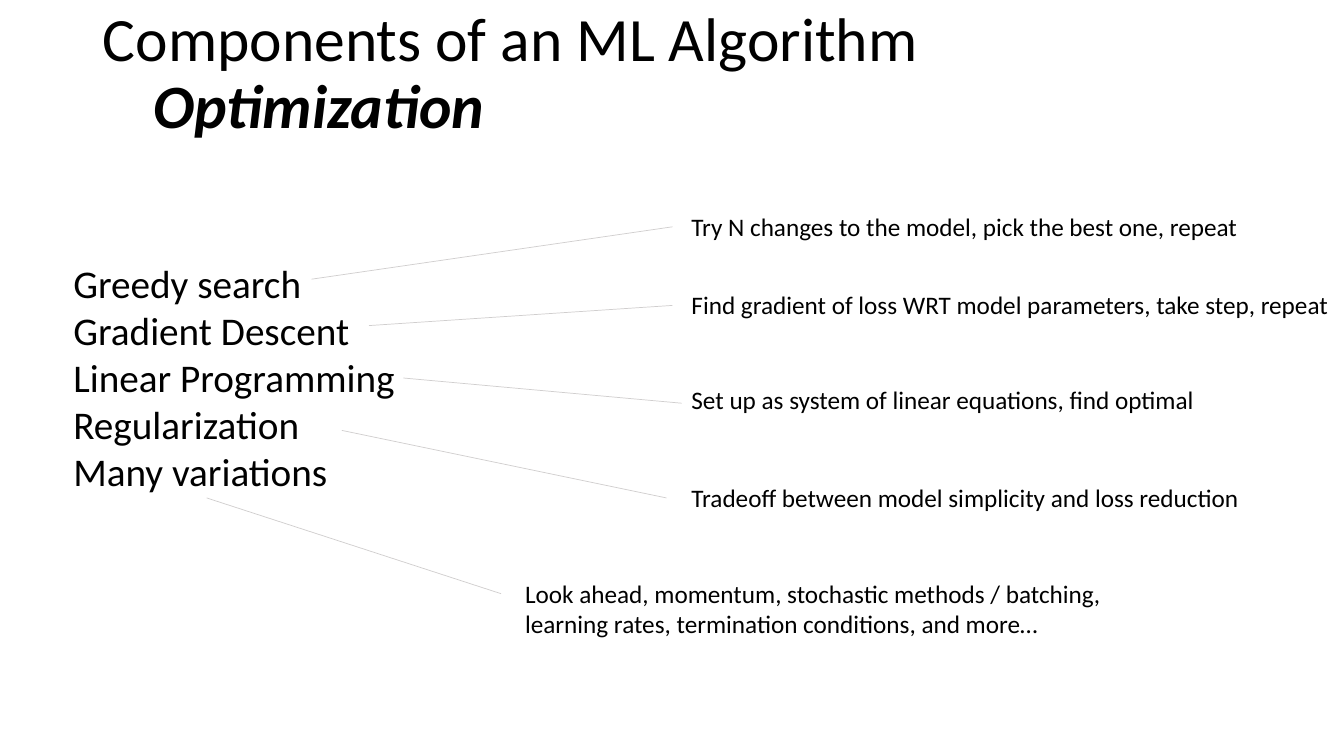
from dataclasses import dataclass

from lxml.etree import SubElement
from pptx import Presentation
from pptx.dml.color import RGBColor
from pptx.enum.shapes import MSO_CONNECTOR
from pptx.enum.text import MSO_ANCHOR, MSO_AUTO_SIZE, PP_ALIGN
from pptx.oxml.ns import qn
from pptx.util import Inches, Pt


@dataclass(frozen=True)
class Theme:
    font: str = "Calibri"
    ink: RGBColor = RGBColor(0x00, 0x00, 0x00)
    rule: RGBColor = RGBColor(0xD0, 0xCE, 0xCE)
    title_size: int = 44
    method_size: int = 28
    note_size: int = 18
    rule_width: float = 0.5


THEME = Theme()

METHODS = ["Greedy search", "Gradient Descent", "Linear Programming",
           "Regularization", "Many variations"]

# One per method: text, left, top, width, height, wrap, leader start, leader end
NOTES = [
    ("Try N changes to the model, pick the best one, repeat",
     6.76, 2.05, 5.69, 0.4, False, (3.09, 2.77), (6.67, 2.25)),
    ("Find gradient of loss WRT model parameters, take step, repeat",
     6.76, 2.82, 6.59, 0.4, False, (3.66, 3.23), (6.67, 3.03)),
    ("Set up as system of linear equations, find optimal",
     6.76, 3.76, 5.36, 0.4, True, (4, 3.75), (6.76, 4)),
    ("Tradeoff between model simplicity and loss reduction",
     6.76, 4.74, 5.9, 0.4, True, (3.39, 4.27), (6.61, 4.94)),
    ("Look ahead, momentum, stochastic methods / batching, "
     "learning rates, termination conditions, and more…",
     5.11, 5.69, 6.3, 0.71, True, (2.05, 4.94), (4.97, 5.89)),
]


def add_span(para, text, size, bold=False, italic=False):
    span = para.add_run()
    span.text = text
    font = span.font
    font.name, font.size = THEME.font, Pt(size)
    font.bold, font.italic = bold, italic
    font.color.rgb = THEME.ink


def set_title(page, heading, topic):
    title = page.shapes.title
    title.left, title.top = Inches(0.92), Inches(0.02)
    title.width, title.height = Inches(11.5), Inches(1.45)
    frame = title.text_frame
    frame.vertical_anchor = MSO_ANCHOR.MIDDLE
    frame.auto_size = MSO_AUTO_SIZE.NONE
    para = frame.paragraphs[0]
    para.alignment = PP_ALIGN.LEFT
    para.line_spacing = 0.9
    add_span(para, heading, THEME.title_size)
    para.add_line_break()
    add_span(para, "\t" + topic, THEME.title_size, bold=True, italic=True)


def add_text(page, lines, left, top, width, height, size, wrap=True, indent=0):
    box = page.shapes.add_textbox(Inches(left), Inches(top), Inches(width), Inches(height))
    frame = box.text_frame
    frame.word_wrap = wrap
    frame.auto_size = MSO_AUTO_SIZE.SHAPE_TO_FIT_TEXT
    for index, line in enumerate(lines):
        para = frame.add_paragraph() if index else frame.paragraphs[0]
        if indent:
            para.level = 1
            properties = para._p.get_or_add_pPr()
            properties.set("marL", str(Inches(indent)))
            properties.set("indent", "0")
        add_span(para, line, size)


def add_leader(page, start, end):
    points = [Inches(value) for value in (*start, *end)]
    leader = page.shapes.add_connector(MSO_CONNECTOR.STRAIGHT, *points)
    leader.line.color.rgb = THEME.rule
    leader.line.width = Pt(THEME.rule_width)
    SubElement(leader._element.spPr, qn("a:effectLst"))


def main():
    deck = Presentation()
    deck.slide_width, deck.slide_height = Inches(13.33), Inches(7.5)
    page = deck.slides.add_slide(deck.slide_layouts.get_by_name("Title Only"))
    set_title(page, "Components of an ML Algorithm", "Optimization")
    add_text(page, METHODS, 0.13, 2.52, 4.77, 2.46, THEME.method_size, indent=0.5)
    for text, left, top, width, height, wrap, start, end in NOTES:
        add_leader(page, start, end)
        add_text(page, [text], left, top, width, height, THEME.note_size, wrap=wrap)
    deck.save("out.pptx")


if __name__ == "__main__":
    main()
